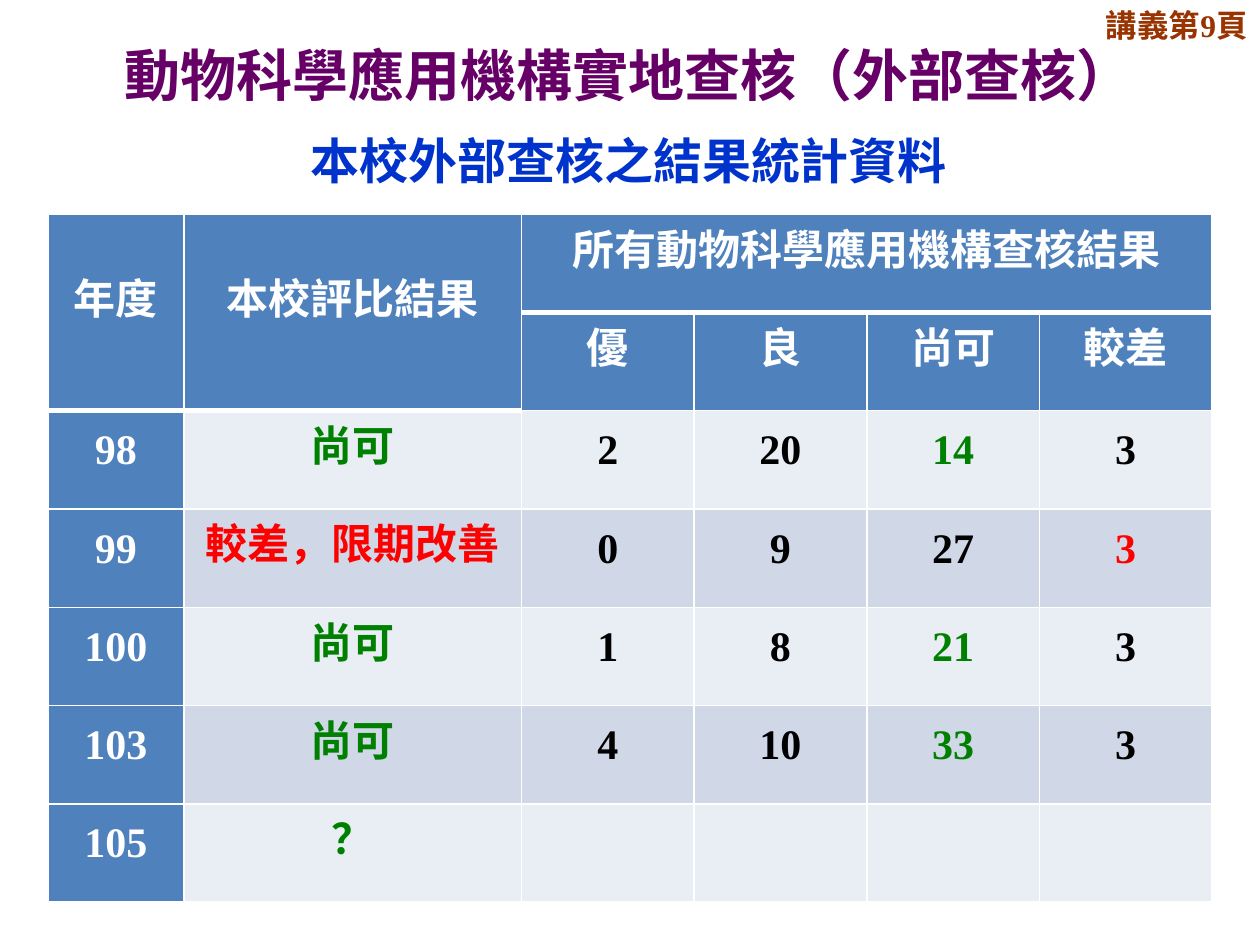
from dataclasses import dataclass

from lxml import etree
from pptx import Presentation
from pptx import util as u
from pptx.dml.color import RGBColor
from pptx.enum import text
from pptx.oxml import ns


@dataclass(frozen=True)
class Theme:
    cjk: str = "Noto Sans CJK SC"
    serif: str = "Times New Roman"
    title_size: int = 32
    subtitle_size: int = 28
    table_size: int = 24
    label_size: int = 18
    title: str = "660066"
    subtitle: str = "0033CC"
    label: str = "993300"
    header: str = "4F81BD"
    bands: tuple = ("E9EDF4", "D0D8E8")
    white: str = "FFFFFF"
    black: str = "000000"
    fair: str = "008000"
    poor: str = "FF0000"


T = Theme()

GRADES = ["優", "良", "尚可", "較差"]
RESULTS = [
    ("98", "尚可", "2", "20", "14", "3"),
    ("99", "較差，限期改善", "0", "9", "27", "3"),
    ("100", "尚可", "1", "8", "21", "3"),
    ("103", "尚可", "4", "10", "33", "3"),
    ("105", "？", "", "", "", ""),
]
COLUMN_WIDTHS = [1.08, 2.68] + [1.37] * len(GRADES)
ROW_HEIGHT = 0.78


def style(p, size, color, font, align=text.PP_ALIGN.CENTER):
    p.alignment = align
    f = p.font
    f.size, f.bold, f.name = u.Pt(size), True, font
    f.color.rgb = RGBColor.from_string(color)
    # East Asian typeface follows the Latin one
    latin = f._element.find(ns.qn("a:latin"))
    ea = etree.Element(ns.qn("a:ea"), typeface=T.cjk)
    latin.addnext(ea)


def fill_text(sp, box, words, *look):
    sp.left, sp.top, sp.width, sp.height = map(u.Inches, box)
    tf = sp.text_frame
    tf.word_wrap = True
    tf.auto_size = text.MSO_AUTO_SIZE.NONE
    tf.vertical_anchor = text.MSO_ANCHOR.MIDDLE
    tf.text = words
    style(tf.paragraphs[0], *look)


def add_text(s, box, words, *look):
    fill_text(s.shapes.add_textbox(0, 0, 0, 0), box, words, *look)


def set_borders(cell, bottom):
    tcPr = cell._tc.get_or_add_tcPr()
    widths = {"lnL": 1, "lnR": 1, "lnT": 1, "lnB": bottom}
    for i, (side, width) in enumerate(widths.items()):
        ln = etree.Element(ns.qn(f"a:{side}"), w=str(u.Pt(width)))
        solid = etree.SubElement(ln, ns.qn("a:solidFill"))
        etree.SubElement(solid, ns.qn("a:srgbClr"), val=T.white)
        tcPr.insert(i, ln)


def set_cell(cell, words, color, fill, bottom=1):
    cell.margin_left = cell.margin_right = u.Inches(0.02)
    cell.margin_top = cell.margin_bottom = 0
    cell.vertical_anchor = text.MSO_ANCHOR.MIDDLE
    cell.fill.solid()
    cell.fill.fore_color.rgb = RGBColor.from_string(fill)
    set_borders(cell, bottom)
    cell.text = words
    p = cell.text_frame.paragraphs[0]
    p.line_spacing = u.Pt(16)
    style(p, T.table_size, color, T.serif)


def result_color(col, row):
    """Colour the school's rating and the count of the grade it received."""
    if col == 0:
        return T.white
    poor = row[1].startswith("較差")
    if col == 1:
        return T.poor if poor else T.fair
    own_grade = 2 + GRADES.index("較差" if poor else "尚可")
    if col == own_grade:
        return T.poor if poor else T.fair
    return T.black


def add_results_table(s):
    n_rows, n_cols = len(RESULTS) + 2, len(COLUMN_WIDTHS)
    frame = s.shapes.add_table(n_rows, n_cols, u.Inches(0.38), u.Inches(1.7),
                               u.Inches(sum(COLUMN_WIDTHS)),
                               u.Inches(ROW_HEIGHT * n_rows))
    table = frame.table
    for column, width in zip(table.columns, COLUMN_WIDTHS):
        column.width = u.Inches(width)
    for row in table.rows:
        row.height = u.Inches(ROW_HEIGHT)

    # Two header rows with merged headings
    top = ["年度", "本校評比結果", "所有動物科學應用機構查核結果", "", "", ""]
    for col, words in enumerate(top):
        set_cell(table.cell(0, col), words, T.white, T.header, bottom=3)
    for col, words in enumerate(["", ""] + GRADES):
        set_cell(table.cell(1, col), words, T.white, T.header,
                 bottom=3 if col < 2 else 1)
    for col in range(2):
        table.cell(0, col).merge(table.cell(1, col))
    table.cell(0, 2).merge(table.cell(0, n_cols - 1))

    # One banded row per year
    for i, row in enumerate(RESULTS):
        for col, words in enumerate(row):
            fill = T.header if col == 0 else T.bands[i % 2]
            set_cell(table.cell(i + 2, col), words, result_color(col, row), fill)


def main():
    prs = Presentation()
    prs.slide_width, prs.slide_height = u.Inches(10), u.Inches(7.5)
    s = prs.slides.add_slide(prs.slide_layouts[5])

    # Headings and handout page
    fill_text(s.shapes.title, (0.05, 0.21, 9.88, 0.75),
              "動物科學應用機構實地查核（外部查核）", T.title_size, T.title, T.cjk)
    add_text(s, (7.67, 0, 2.33, 0.4), "講義第9頁",
             T.label_size, T.label, T.serif, text.PP_ALIGN.RIGHT)
    add_text(s, (0.37, 0.99, 9.24, 0.55), "本校外部查核之結果統計資料",
             T.subtitle_size, T.subtitle, T.cjk)

    add_results_table(s)
    prs.save("out.pptx")


if __name__ == "__main__":
    main()
